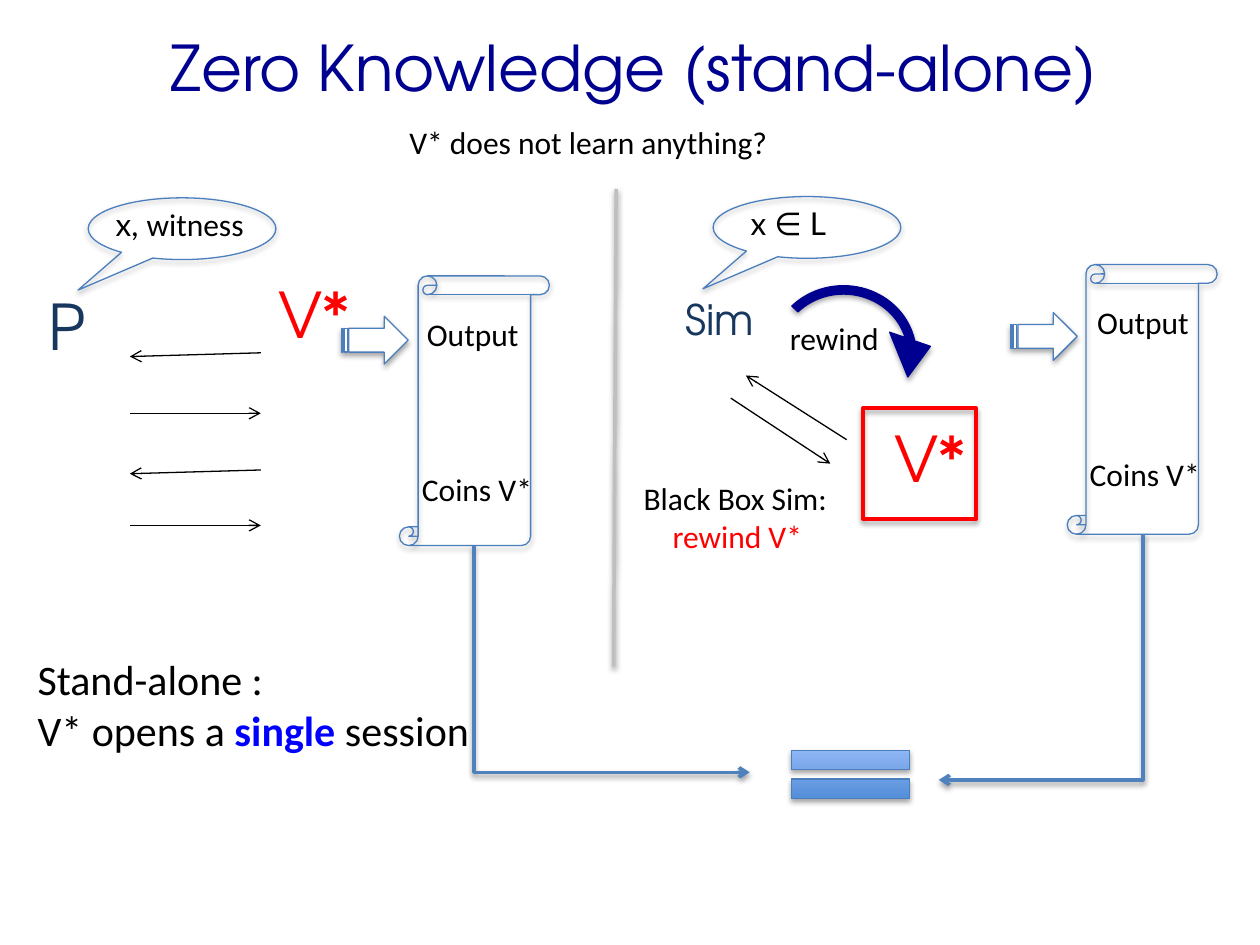
from dataclasses import dataclass

import lxml.etree
import pptx
import pptx.dml.color
import pptx.enum.shapes
import pptx.enum.text
import pptx.oxml.ns
import pptx.util

Inches = pptx.util.Inches
Shapes = pptx.enum.shapes.MSO_SHAPE
Connectors = pptx.enum.shapes.MSO_CONNECTOR
qn = pptx.oxml.ns.qn

DISPLAY = "TeX Gyre Adventor"
BODY = "Calibri"
BLACK, RED, NAVY, SLATE = "000000", "FF0000", "000090", "17375E"
OUTLINE = "4B7EBC"


@dataclass
class Label:
    text: str
    left: float
    top: float
    width: float
    height: float = 0.4
    size: float = 18
    font: str = BODY
    color: str = BLACK
    wrap: bool = True


@dataclass
class Figure:
    kind: pptx.enum.shapes.MSO_SHAPE
    left: float
    top: float
    width: float
    height: float
    fill: str | None = None
    line: str = OUTLINE
    weight: float = 0.75
    adjustments: tuple[float, ...] = ()
    mirrored: bool = False


@dataclass
class Line:
    x1: float
    y1: float
    x2: float
    y2: float
    color: str = BLACK
    weight: float = 0.75
    arrow: bool = True
    shadow: bool = False


def rgb(value: str) -> pptx.dml.color.RGBColor:
    return pptx.dml.color.RGBColor.from_string(value)


def format_span(span, size: float, font: str, color: str, bold: bool = False) -> None:
    span.font.size = pptx.util.Pt(size)
    span.font.name = font
    span.font.bold = bold
    span.font.color.rgb = rgb(color)


def add_span(para, text: str, size: float, color: str, bold: bool = False) -> None:
    span = para.add_run()
    span.text = text
    format_span(span, size, BODY, color, bold)


def add_shadow(effects, opacity: int, distance: float) -> None:
    shadow = lxml.etree.SubElement(
        effects, qn("a:outerShdw"), blurRad=str(pptx.util.Pt(3.1)),
        dist=str(pptx.util.Pt(distance)), dir="5400000", rotWithShape="0")
    color = lxml.etree.SubElement(shadow, qn("a:srgbClr"), val=BLACK)
    lxml.etree.SubElement(color, qn("a:alpha"), val=str(opacity * 1000))


def draw_label(page, label: Label):
    box = page.shapes.add_textbox(Inches(label.left), Inches(label.top),
                                  Inches(label.width), Inches(label.height))
    frame = box.text_frame
    frame.word_wrap = label.wrap
    frame.text = label.text
    for para in frame.paragraphs:
        for span in para.runs:
            format_span(span, label.size, label.font, label.color)
    return frame


def draw_figure(page, figure: Figure):
    shape = page.shapes.add_shape(figure.kind, Inches(figure.left), Inches(figure.top),
                                  Inches(figure.width), Inches(figure.height))
    for index, value in enumerate(figure.adjustments):
        shape.adjustments[index] = value
    if figure.fill:
        shape.fill.solid()
        shape.fill.fore_color.rgb = rgb(figure.fill)
    else:
        shape.fill.background()
    shape.line.color.rgb = rgb(figure.line)
    shape.line.width = pptx.util.Pt(figure.weight)
    shape.shadow.inherit = False
    properties = shape._element.spPr
    add_shadow(properties.find(qn("a:effectLst")), 35, 1.8)
    if figure.mirrored:
        properties.find(qn("a:xfrm")).set("flipH", "1")
    return shape


def draw_line(page, line: Line, kind=Connectors.STRAIGHT):
    connector = page.shapes.add_connector(kind, Inches(line.x1), Inches(line.y1),
                                          Inches(line.x2), Inches(line.y2))
    connector.line.color.rgb = rgb(line.color)
    connector.line.width = pptx.util.Pt(line.weight)
    properties = connector._element.spPr
    if line.arrow:
        lxml.etree.SubElement(properties.find(qn("a:ln")), qn("a:tailEnd"), type="arrow")
    effects = lxml.etree.SubElement(properties, qn("a:effectLst"))
    if line.shadow:
        add_shadow(effects, 38, 1.6)
    return connector


def draw_elbow(page, x1: float, y1: float, x2: float, y2: float) -> None:
    drop, run = y2 - y1, abs(x2 - x1)
    center_x, center_y = (x1 + x2) / 2, (y1 + y2) / 2
    elbow = draw_line(page, Line(center_x - drop / 2, center_y - run / 2,
                                 center_x + drop / 2, center_y + run / 2,
                                 "4F81BD", 2, shadow=True), Connectors.ELBOW)
    properties = elbow._element.spPr
    properties.find(qn("a:prstGeom")).set("prst", "bentConnector2")
    frame = properties.find(qn("a:xfrm"))
    if x2 > x1:
        frame.set("rot", str(270 * 60000))
        frame.set("flipH", "1")
    else:
        frame.set("rot", str(90 * 60000))


LABELS = [
    Label("V* does not learn anything?", 3.15, 0.93, 3.37),
    Label("P", 0.29, 2.23, 0.69, 0.71, 36, DISPLAY, SLATE),
    Label("V*", 2.11, 2.14, 0.91, 0.71, 36, DISPLAY, RED),
    Label("Output", 3.29, 2.45, 1.06),
    Label("Coins V*", 3.25, 3.68, 1.11),
    Label("Sim", 5.34, 2.28, 0.96, 0.5, 24, DISPLAY, SLATE),
    Label("x ∈ L", 5.86, 1.57, 1.19, font="Lato"),
    Label("V*", 7, 3.28, 0.88, 0.71, 36, DISPLAY, RED),
    Label("rewind", 6.17, 2.48, 1.6),
    Label("Output", 8.61, 2.36, 1.06),
    Label("Coins V*", 8.55, 3.56, 1.11),
]

FIGURES = [
    Figure(Shapes.RECTANGLE, 6.85, 3.24, 0.9, 0.88, line=RED, weight=2.25),
    Figure(Shapes.CIRCULAR_ARROW, 5.98, 2.13, 1.43, 1.37, NAVY, NAVY,
           adjustments=(0.049, 19.283, 208.217, 133.939, 0.125)),
]
for left, top in ((3.17, 2.19), (8.47, 2.1)):
    FIGURES.append(Figure(Shapes.VERTICAL_SCROLL, left, top, 1.19, 2.14))
for left, top in ((2.71, 2.51), (8.02, 2.48)):
    FIGURES.append(Figure(Shapes.STRIPED_RIGHT_ARROW, left, top, 0.53, 0.38, "FFFFFF"))
for left, top in ((0.7, 1.57), (5.66, 1.56)):
    FIGURES.append(Figure(Shapes.OVAL_CALLOUT, left, top, 1.49, 0.49,
                          adjustments=(0.554, 0.994), mirrored=True))

LINES = [
    Line(4.89, 1.5, 4.87, 5.29, "BFBFBF", 2, arrow=False, shadow=True),
    Line(2.07, 2.8, 1.03, 2.83),
    Line(1.03, 3.28, 2.07, 3.28),
    Line(2.07, 3.73, 1.03, 3.76),
    Line(1.03, 4.17, 2.07, 4.17),
    Line(5.8, 3.16, 6.59, 3.68),
    Line(6.72, 3.49, 5.92, 2.98),
]


def main() -> None:
    deck = pptx.Presentation()
    deck.slide_width, deck.slide_height = Inches(10), Inches(7.5)
    page = deck.slides.add_slide(deck.slide_layouts[6])

    title = draw_label(page, Label("Zero Knowledge (stand-alone)", 0.53, -0.1, 9, 1.25,
                                   36, DISPLAY, NAVY))
    title.vertical_anchor = pptx.enum.text.MSO_ANCHOR.MIDDLE
    title.paragraphs[0].alignment = pptx.enum.text.PP_ALIGN.CENTER

    for label in LABELS:
        draw_label(page, label)
    witness = draw_label(page, Label("x, ", 0.82, 1.58, 1.29, font="Lato", wrap=False))
    add_span(witness.paragraphs[0], "witness", 18, BLACK)

    session = draw_label(page, Label("Stand-alone :\nV* opens a ", 0.2, 5.14, 4.53, 0.91, 24))
    add_span(session.paragraphs[1], "single", 24, "0000FF", bold=True)
    add_span(session.paragraphs[1], " session", 24, BLACK)

    simulation = draw_label(page, Label("Black Box Sim:\nrewind V*", 5.01, 3.75, 1.71, 0.71))
    rewinding = simulation.paragraphs[1]
    rewinding.runs[0].font.color.rgb = rgb(RED)
    rewinding._p.get_or_add_pPr().set("marL", str(Inches(0.23)))

    for figure in FIGURES:
        draw_figure(page, figure)
    for line in LINES:
        draw_line(page, line)

    draw_elbow(page, 3.76, 4.33, 5.95, 6.13)
    draw_elbow(page, 9.07, 4.24, 7.45, 6.19)
    equal = draw_figure(page, Figure(Shapes.MATH_EQUAL, 6.11, 5.82, 1.28, 0.65))
    equal.fill.gradient()
    equal.fill.gradient_angle = 90
    for stop, color in zip(equal.fill.gradient_stops, ("3F80CE", "A4C4FF")):
        stop.color.rgb = rgb(color)

    deck.save("out.pptx")


if __name__ == "__main__":
    main()
